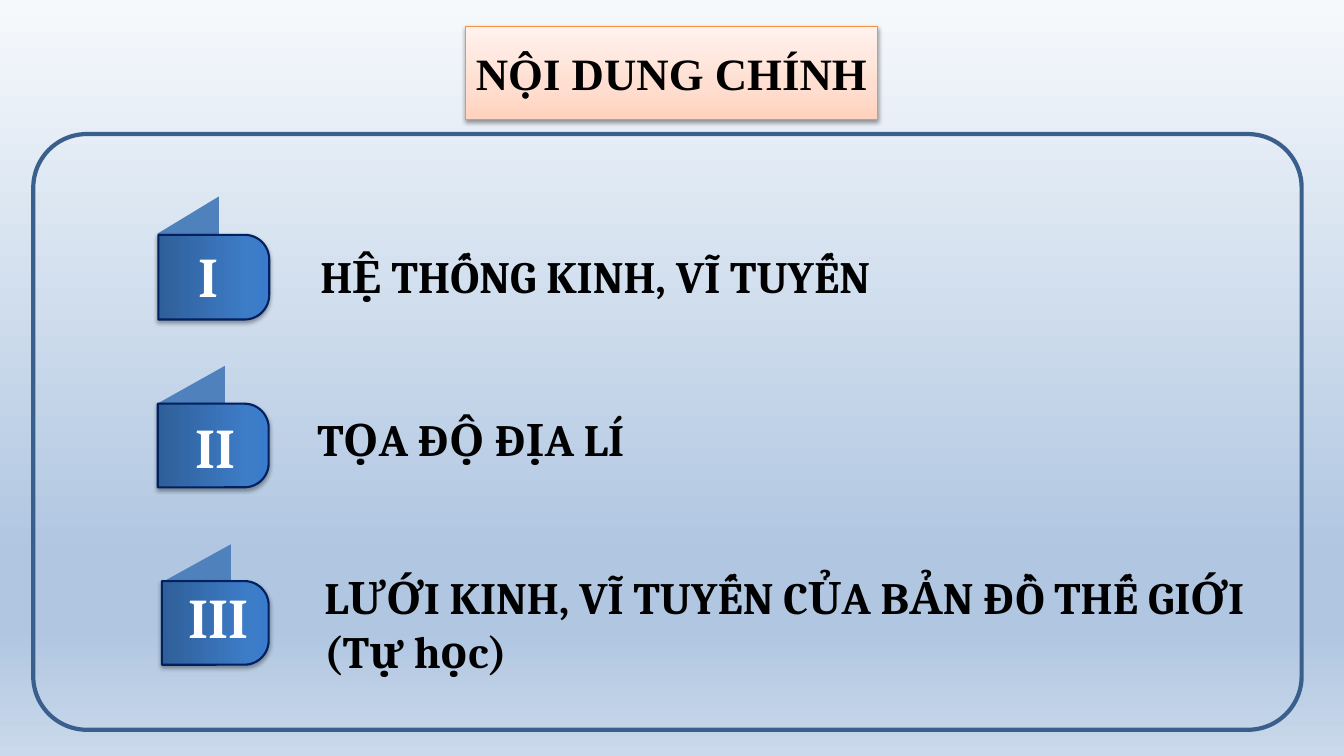
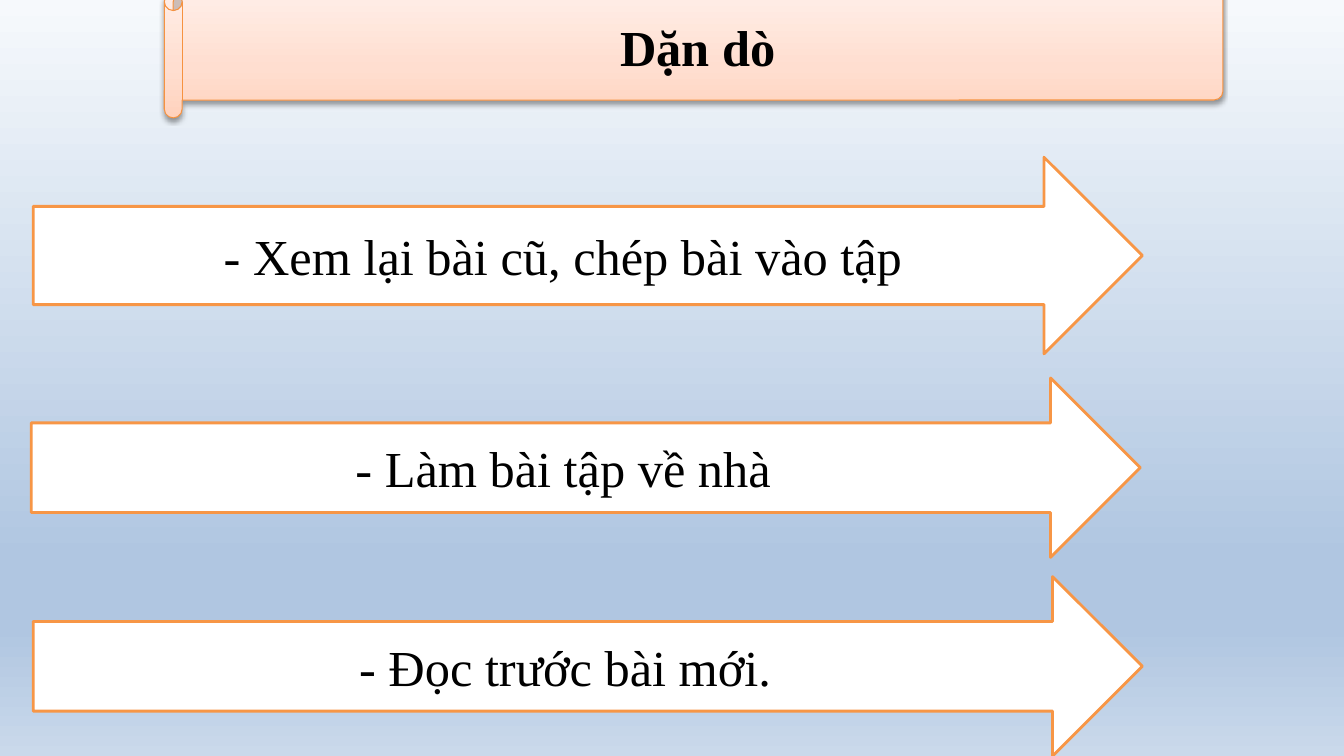
from lxml import etree
from pptx import Presentation
from pptx.dml.color import RGBColor
from pptx.enum.shapes import MSO_SHAPE
from pptx.enum.text import MSO_ANCHOR, PP_ALIGN
from pptx.oxml.ns import qn
from pptx.util import Inches, Pt

RECT = MSO_SHAPE.RECTANGLE
ROUND = MSO_SHAPE.ROUNDED_RECTANGLE
TAB = MSO_SHAPE.ROUND_2_SAME_RECTANGLE
SCROLL = MSO_SHAPE.HORIZONTAL_SCROLL
ARROW = MSO_SHAPE.RIGHT_ARROW
MIDDLE = MSO_ANCHOR.MIDDLE
CENTER, JUSTIFY = PP_ALIGN.CENTER, PP_ALIGN.JUSTIFY

# Colours
BLACK = RGBColor(0x00, 0x00, 0x00)
WHITE = RGBColor(0xFF, 0xFF, 0xFF)
NAVY = RGBColor(0x00, 0x20, 0x60)
STEEL = RGBColor(0x3A, 0x5F, 0x8C)
BLUE = RGBColor(0x4F, 0x81, 0xBD)
AMBER = RGBColor(0xF6, 0x92, 0x40)
ORANGE = RGBColor(0xF7, 0x96, 0x46)

# Gradients: stops in percent, then the angle
SKY = ([(0, "F6F9FC"), (74, "B0C6E1"), (83, "B0C6E1"), (100, "CAD9EB")], 90)
PEACH = ([(0, "FFD2BD"), (35, "FFDED0"), (100, "FFF2ED")], 270)
OCEAN = ([(0, "2F5F99"), (80, "3D7CC7"), (100, "3A7CCB")], 270)

# Text styles
TITLE = dict(name="Times New Roman", size=Pt(32), bold=True)
BANNER = dict(TITLE, size=Pt(36))
TASK = dict(BANNER, bold=False)
TOPIC = dict(name="Cambria", size=Pt(32), bold=True)
NUMBER = dict(TOPIC, size=Pt(40))

# Number, fold (left, top, width), tab box, number box, topic box, topic lines
TOPICS = [
    ("I", (1.56, 1.95, 0.61), (1.7, 2.2, 0.84, 1.1), (1.65, 2.36, 0.83, 0.74),
     (3.08, 2.3, 8.07, 0.86), ["HỆ THỐNG KINH, VĨ TUYẾN"]),
    ("II", (1.57, 3.63, 0.66), (1.7, 3.87, 0.83, 1.1), (1.8, 4.01, 0.67, 0.83),
     (3.05, 3.86, 8.1, 0.98), ["TỌA ĐỘ ĐỊA LÍ"]),
    ("III", (1.62, 5.4, 0.67), (1.72, 5.65, 0.83, 1.06), (1.55, 5.74, 1.23, 0.75),
     (3.12, 5.81, 9.46, 0.75),
     ["LƯỚI KINH, VĨ TUYẾN CỦA BẢN ĐỒ THẾ GIỚI", "(Tự học)"]),
]
TASKS = [
    ("- Xem lại bài cũ, chép bài vào tập", (0.33, 1.56, 11, 1.95)),
    ("- Làm bài tập về nhà", (0.31, 3.75, 11, 1.78)),
    ("- Đọc trước bài mới.", (0.33, 5.72, 11, 1.78)),
]


def shade(fill, root, grad):
    """Give a fill a gradient with any number of stops."""
    stops, angle = grad
    fill.gradient()
    node = root.find(".//" + qn("a:gradFill"))
    node.set("rotWithShape", "1")
    node.find(qn("a:lin")).set("ang", str(angle * 60000))
    items = node.find(qn("a:gsLst"))
    for old in list(items):
        items.remove(old)
    for place, color in stops:
        stop = etree.SubElement(items, qn("a:gs"), pos=str(place * 1000))
        etree.SubElement(stop, qn("a:srgbClr"), val=color)


def drop(shape, alpha, dist):
    """Cast a soft shadow straight down."""
    effect = shape._element.spPr.find(qn("a:effectLst"))
    outer = etree.SubElement(effect, qn("a:outerShdw"), blurRad="40000",
                             dist=str(Pt(dist)), dir="5400000", rotWithShape="0")
    color = etree.SubElement(outer, qn("a:srgbClr"), val=str(BLACK))
    etree.SubElement(color, qn("a:alpha"), val=str(alpha * 1000))


def write(shape, lines, style, color=BLACK, align=CENTER, wrap=True):
    frame = shape.text_frame
    frame.word_wrap = wrap
    frame.vertical_anchor = MIDDLE
    for i, line in enumerate(lines):
        para = frame.add_paragraph() if i else frame.paragraphs[0]
        para.alignment = align
        run = para.add_run()
        run.text = line
        for key, value in style.items():
            setattr(run.font, key, value)
        run.font.color.rgb = color


def label(slide, box, lines, style, color=BLACK, align=CENTER):
    write(slide.shapes.add_textbox(*map(Inches, box)), lines, style, color, align)


def block(slide, kind, box, fill, line, width):
    """Add a shape; fill is a colour, a gradient or None."""
    shape = slide.shapes.add_shape(kind, *map(Inches, box))
    shape.shadow.inherit = False
    if fill is None:
        shape.fill.background()
    elif isinstance(fill, RGBColor):
        shape.fill.solid()
        shape.fill.fore_color.rgb = fill
    else:
        shade(shape.fill, shape._element.spPr, fill)
    shape.line.color.rgb = line
    shape.line.width = Pt(width)
    return shape


def header(slide, kind, box, text, style):
    shape = block(slide, kind, box, PEACH, AMBER, 0.75)
    drop(shape, 38, 1.6)
    write(shape, [text], style, wrap=False)


def fold(slide, left, top, width):
    """Draw the folded corner behind a number tab."""
    right, base = left + width, top + 0.37
    pen = slide.shapes.build_freeform(Inches(left), Inches(base))
    pen.add_line_segments([(Inches(right), Inches(top)),
                           (Inches(right), Inches(base))])
    shape = pen.convert_to_shape()
    shape.shadow.inherit = False
    shape.fill.solid()
    shape.fill.fore_color.rgb = BLUE
    shape.line.fill.background()


def badge(slide, box):
    shape = block(slide, TAB, box, OCEAN, NAVY, 1.5)
    shape.adjustments[0] = 0.29
    shape.rotation = 90
    drop(shape, 35, 1.8)


def main():
    prs = Presentation()
    prs.slide_width, prs.slide_height = Inches(13.33), Inches(7.5)
    master = prs.slide_master
    shade(master.background.fill, master.element, SKY)
    blank = prs.slide_layouts[6]

    # Contents
    slide = prs.slides.add_slide(blank)
    header(slide, RECT, (4.62, 0.26, 4.08, 0.93), "NỘI DUNG CHÍNH", TITLE)
    panel = block(slide, ROUND, (0.33, 1.33, 12.58, 5.91), None, STEEL, 3)
    panel.adjustments[0] = 0.09
    for number, corner, tab, spot, box, lines in TOPICS:
        fold(slide, *corner)
        badge(slide, tab)
        label(slide, spot, [number], NUMBER, WHITE)
        label(slide, box, lines, TOPIC, align=JUSTIFY)

    # Homework
    slide = prs.slides.add_slide(blank)
    header(slide, SCROLL, (1.63, -0.25, 10.5, 1.42), "Dặn dò", BANNER)
    for text, box in TASKS:
        write(block(slide, ARROW, box, WHITE, ORANGE, 2), [text], TASK)

    prs.save("out.pptx")


if __name__ == "__main__":
    main()
